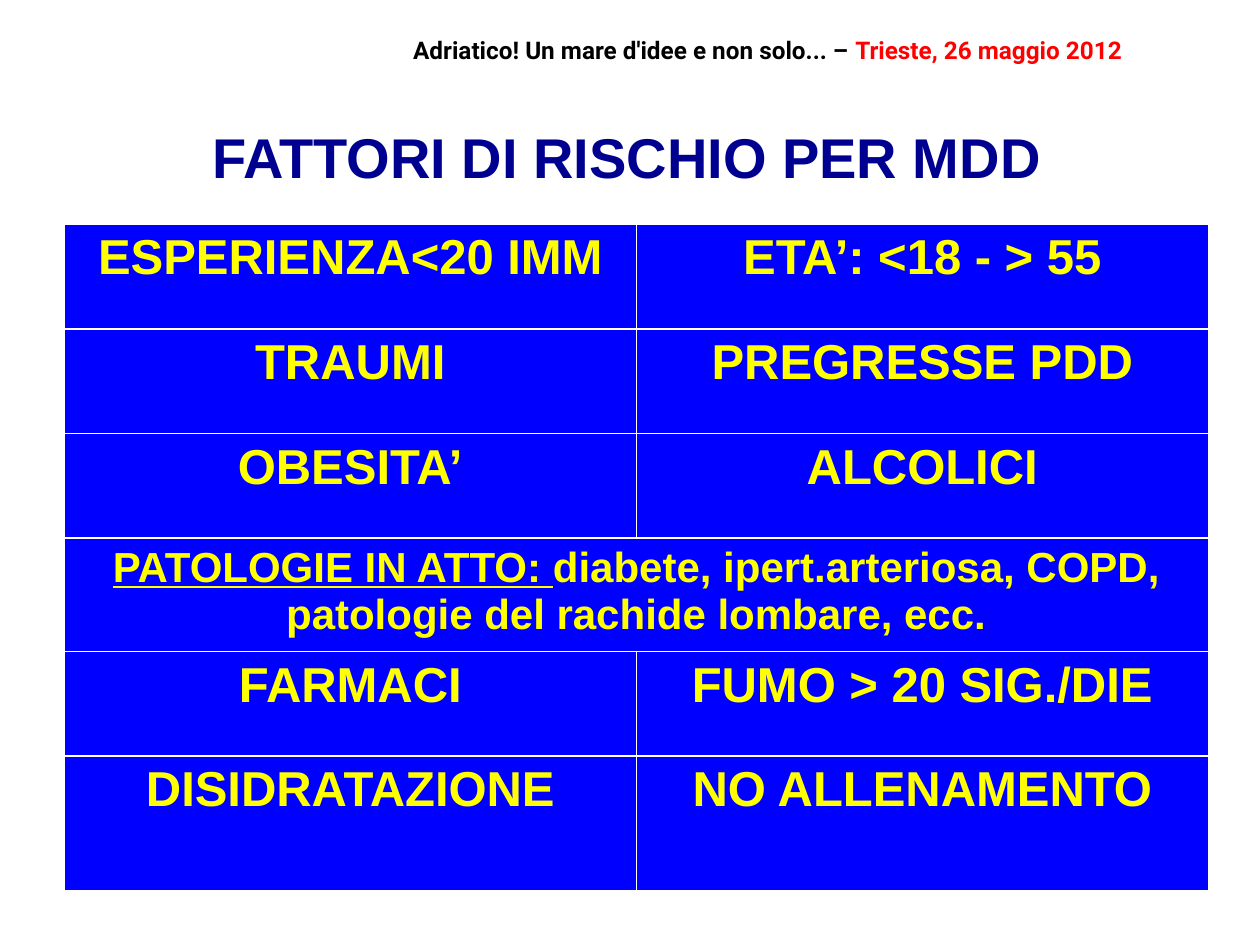
from lxml import etree
from pptx import Presentation
from pptx.dml.color import RGBColor
from pptx.enum.text import MSO_AUTO_SIZE, PP_ALIGN
from pptx.oxml.ns import qn
from pptx.util import Inches, Pt

CENTER, LEFT = PP_ALIGN.CENTER, PP_ALIGN.LEFT
FIT_SHAPE = MSO_AUTO_SIZE.SHAPE_TO_FIT_TEXT

COLORS = {
    "black": "000000",
    "red": "FF0000",
    "navy": "000090",
    "blue": "0000FF",
    "yellow": "FFFF00",
    "white": "FFFFFF",
}

# A row with one entry spans both columns
RISK_FACTORS = [
    ("ESPERIENZA<20 IMM", "ETA’: <18 - > 55"),
    ("TRAUMI", "PREGRESSE PDD"),
    ("OBESITA’", "ALCOLICI"),
    ("PATOLOGIE IN ATTO: ",),
    ("FARMACI", "FUMO > 20 SIG./DIE"),
    ("DISIDRATAZIONE", "NO ALLENAMENTO"),
]
CONDITIONS = "diabete, ipert.arteriosa, COPD, patologie del rachide lombare, ecc."
ROW_HEIGHT, LAST_ROW_HEIGHT = 0.83, 1.07


def rgb(name):
    return RGBColor.from_string(COLORS[name])


def add_run(paragraph, text, size, color, font="Arial", underline=None):
    run = paragraph.add_run()
    run.text = text
    run.font.name = font
    run.font.size = Pt(size)
    run.font.bold = True
    run.font.underline = underline
    run.font.color.rgb = rgb(color)
    return run


def add_text_line(slide, box, align, wrap):
    frame = slide.shapes.add_textbox(*map(Inches, box)).text_frame
    frame.word_wrap = wrap
    frame.auto_size = FIT_SHAPE
    line = frame.paragraphs[0]
    line.alignment = align
    return line


def add_event_header(slide, box):
    line = add_text_line(slide, box, LEFT, False)
    for text, color in (
        ("Adriatico! Un mare d'idee e non solo... – ", "black"),
        ("Trieste, 26 maggio 2012", "red"),
    ):
        run = add_run(line, text, 24, color, "Roboto")
        run.font._element.set("baseline", "30000")


def add_title(slide, box):
    line = add_text_line(slide, box, CENTER, True)
    add_run(line, "FATTORI DI RISCHIO PER MDD", 32, "navy")


def style_cell(cell):
    # Borders come before the fill in the cell properties
    properties = cell._tc.get_or_add_tcPr()
    for side in ("a:lnL", "a:lnR", "a:lnT", "a:lnB"):
        border = etree.SubElement(properties, qn(side), w=str(Pt(1)))
        fill = etree.SubElement(border, qn("a:solidFill"))
        etree.SubElement(fill, qn("a:srgbClr"), val=COLORS["white"])
    cell.fill.solid()
    cell.fill.fore_color.rgb = rgb("blue")


def add_risk_table(slide, box):
    table = slide.shapes.add_table(len(RISK_FACTORS), 2, *map(Inches, box)).table
    table.first_row = table.horz_banding = False
    for column in table.columns:
        column.width = Inches(box[2] / 2)

    for row, factors in enumerate(RISK_FACTORS):
        is_last = row == len(RISK_FACTORS) - 1
        table.rows[row].height = Inches(LAST_ROW_HEIGHT if is_last else ROW_HEIGHT)
        for column in range(2):
            style_cell(table.cell(row, column))
        spans = len(factors) == 1
        if spans:
            table.cell(row, 0).merge(table.cell(row, 1))
        for column, factor in enumerate(factors):
            line = table.cell(row, column).text_frame.paragraphs[0]
            line.alignment = CENTER
            if spans:
                add_run(line, factor, 24, "yellow", underline=True)
                add_run(line, CONDITIONS, 24, "yellow")
            else:
                add_run(line, factor, 28, "yellow")


def main():
    deck = Presentation()
    deck.slide_width, deck.slide_height = Inches(10), Inches(7.5)
    slide = deck.slides.add_slide(deck.slide_layouts[6])
    add_event_header(slide, (3.18, 0.19, 6.21, 0.37))
    add_title(slide, (1.14, 0.92, 7.67, 0.64))
    add_risk_table(slide, (0.51, 1.78, 9.08, 5.22))
    deck.save("out.pptx")


if __name__ == "__main__":
    main()
